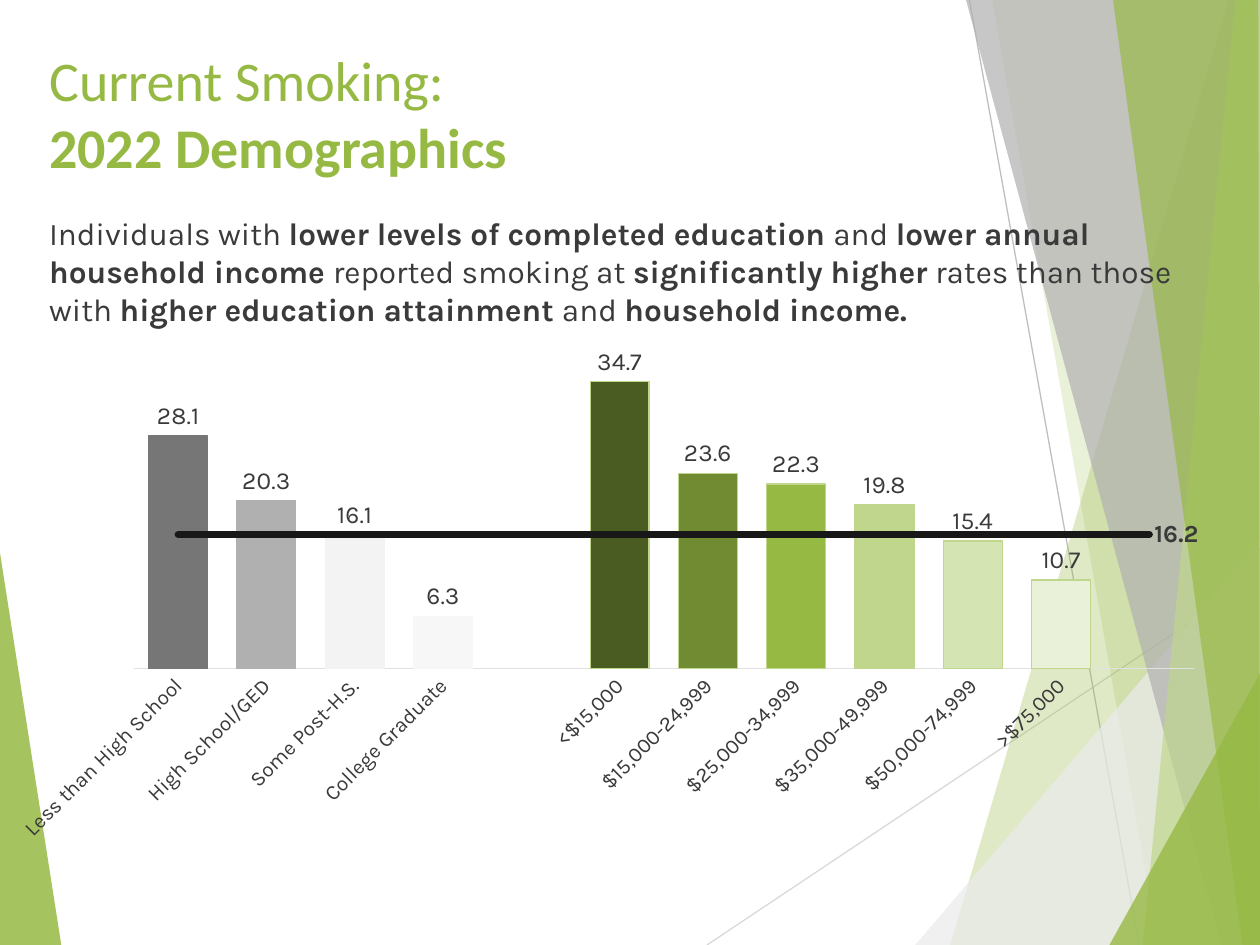
import pptx
import pptx.util
import pptx.chart.data
import pptx.dml.color
import pptx.enum.chart
import pptx.enum.shapes
import pptx.enum.text
import pptx.oxml
import pptx.oxml.ns

Pt = pptx.util.Pt
RGBColor = pptx.dml.color.RGBColor
qn = pptx.oxml.ns.qn

GREEN = RGBColor(0x96, 0xB9, 0x43)
PALE_GREEN = RGBColor(0xC0, 0xD6, 0x8D)
GREY = RGBColor(0xB0, 0xB0, 0xB0)
DARK_GREY = RGBColor(0x76, 0x76, 0x76)
LIGHT_GREY = RGBColor(0xEB, 0xEB, 0xEB)
RULE_GREY = RGBColor(0xD9, 0xD9, 0xD9)
RULE_DARK = RGBColor(0xBF, 0xBF, 0xBF)
AXIS = RGBColor(0xE1, 0xE1, 0xE1)
TEXT = RGBColor(0x3A, 0x3A, 0x3A)
BLACK = RGBColor(0x18, 0x18, 0x18)

EDUCATION = [
    ("Less than High School", 28.1, DARK_GREY),
    ("High School/GED", 20.3, GREY),
    ("Some Post-H.S.", 16.1, RGBColor(0xF3, 0xF3, 0xF3)),
    ("College Graduate", 6.3, RGBColor(0xF7, 0xF7, 0xF7)),
]
INCOME = [
    ("<$15,000", 34.7, RGBColor(0x4B, 0x5C, 0x22)),
    ("$15,000-24,999", 23.6, RGBColor(0x70, 0x8B, 0x32)),
    ("$25,000-34,999", 22.3, GREEN),
    ("$35,000-49,999", 19.8, PALE_GREEN),
    ("$50,000-74,999", 15.4, RGBColor(0xD5, 0xE4, 0xB3)),
    (">$75,000", 10.7, RGBColor(0xEA, 0xF1, 0xD9)),
]
GAP = ("", None, None)
BARS = EDUCATION + [GAP] + INCOME + [GAP]
AVERAGE = 16.2

LEFT_FACET = ([(0, 316), (35, 540), (0, 540)], GREEN, 85)
RULES = [
    ((404, 540), (720, 329), RULE_GREY),
    ((554, 0), (651, 540), RULE_DARK),
]
RIGHT_FACETS = [
    ([(702, 0), (543, 540), (720, 540), (720, 0)], GREEN, 30),
    ([(567, 0), (662, 540), (720, 540), (720, 0)], GREEN, 20),
    ([(523, 540), (720, 309), (720, 540)], LIGHT_GREY, 72),
    ([(552, 0), (698, 540), (720, 540), (720, 0)], GREY, 70),
    ([(706, 0), (653, 540), (720, 540), (720, 0)], PALE_GREEN, 70),
    ([(636, 0), (710, 540), (720, 540), (719, 0)], GREEN, 65),
    ([(634, 540), (720, 385), (720, 540)], GREEN, 80),
]


def add_child(parent, tag, **attributes):
    element = parent.makeelement(qn(tag), attributes)
    parent.append(element)
    return element


def remove_children(parent, tag):
    for element in parent.findall(qn(tag)):
        parent.remove(element)


def add_facet(s, left, top, points, color, opacity):
    corners = [(Pt(left + x), Pt(top + y)) for x, y in points]
    builder = s.shapes.build_freeform(*corners[0])
    builder.add_line_segments(corners[1:], close=True)
    sp = builder.convert_to_shape()
    sp.shadow.inherit = False
    sp.fill.solid()
    sp.fill.fore_color.rgb = color
    sp.line.fill.background()
    fill = sp._element.spPr.find(qn("a:solidFill"))
    add_child(fill[0], "a:alpha", val=str(opacity * 1000))


def add_backdrop(s, left, top):
    add_facet(s, left, top, *LEFT_FACET)
    for (x1, y1), (x2, y2), color in RULES:
        rule = s.shapes.add_connector(
            pptx.enum.shapes.MSO_CONNECTOR.STRAIGHT,
            Pt(left + x1), Pt(top + y1), Pt(left + x2), Pt(top + y2))
        rule.line.color.rgb = color
        rule.line.width = Pt(0.75)
        add_child(rule._element.spPr, "a:effectLst")
    for facet in RIGHT_FACETS:
        add_facet(s, left, top, *facet)


def style_font(font, name, size, color, bold=False):
    font.name = name
    font.size = Pt(size)
    font.color.rgb = color
    font.bold = bold


def add_text(s, left, top, width, height, anchor):
    tf = s.shapes.add_textbox(Pt(left), Pt(top), Pt(width), Pt(height)).text_frame
    tf.word_wrap = True
    tf.vertical_anchor = anchor
    return tf.paragraphs[0]


def add_run(p, text, *style):
    r = p.add_run()
    r.text = text
    style_font(r.font, *style)


def add_title(s, left, top, width, height):
    p = add_text(s, left, top, width, height, pptx.enum.text.MSO_ANCHOR.MIDDLE)
    add_run(p, "Current Smoking:", "Calibri", 32, GREEN)
    p.add_line_break()
    add_run(p, "2022 Demographics", "Calibri", 32, GREEN, True)


def add_finding(s, left, top, width, height):
    p = add_text(s, left, top, width, height, pptx.enum.text.MSO_ANCHOR.TOP)
    parts = [
        "Individuals with ", "lower levels of completed education ",
        "and ", "lower annual household income ",
        "reported smoking at ", "significantly higher",
        " rates than those with ", "higher education attainment ",
        "and ", "household income.",
    ]
    for i, text in enumerate(parts):
        add_run(p, text, "Karla", 18, TEXT, i % 2 == 1)


def move_to_line_plot(chart):
    bar_plot = chart.plots[0]._element
    ser = bar_plot.findall(qn("c:ser"))[1]
    remove_children(ser, "c:invertIfNegative")
    line_plot = bar_plot.makeelement(qn("c:lineChart"), {})
    add_child(line_plot, "c:grouping", val="standard")
    add_child(line_plot, "c:varyColors", val="0")
    line_plot.append(ser)
    add_child(line_plot, "c:marker", val="1")
    for axis in bar_plot.findall(qn("c:axId")):
        add_child(line_plot, "c:axId", val=axis.get("val"))
    bar_plot.addnext(line_plot)


def set_plot_area(chart, x, y, w, h):
    area = chart._chartSpace.chart.plotArea
    remove_children(area, "c:layout")
    layout = area.makeelement(qn("c:layout"), {})
    manual = add_child(layout, "c:manualLayout")
    add_child(manual, "c:layoutTarget", val="inner")
    add_child(manual, "c:xMode", val="edge")
    add_child(manual, "c:yMode", val="edge")
    for tag, value in zip("xywh", (x, y, w, h)):
        add_child(manual, "c:" + tag, val=str(value))
    area.insert(0, layout)


def style_bars(plot):
    plot.gap_width = 50
    plot.vary_by_categories = False
    series = plot.series[0]
    series.format.fill.solid()
    series.format.fill.fore_color.rgb = DARK_GREY
    for i, (name, value, color) in enumerate(BARS):
        if value is None:
            continue
        bar = series.points[i].format
        bar.fill.solid()
        bar.fill.fore_color.rgb = color
        bar.line.color.rgb = PALE_GREEN if i > len(EDUCATION) else color
        bar.line.width = Pt(0.75)
    labels = series.data_labels
    labels.show_value = True
    labels.position = pptx.enum.chart.XL_LABEL_POSITION.OUTSIDE_END
    style_font(labels.font, "Karla", 14, TEXT)


def style_average(plot):
    series = plot.series[0]
    series.smooth = False
    series.marker.style = pptx.enum.chart.XL_MARKER_STYLE.NONE
    line = series.format.line
    line.color.rgb = BLACK
    line.width = Pt(4)
    series._element.spPr.find(qn("a:ln")).set("cap", "rnd")
    series.data_labels.show_value = False
    label = series.points[len(BARS) - 1].data_label
    style_font(label.font, "Karla", 14, TEXT, True)
    label.position = pptx.enum.chart.XL_LABEL_POSITION.RIGHT


def add_smoking_chart(s, left, top, width, height):
    data = pptx.chart.data.CategoryChartData(number_format="0.0")
    data.categories = [name for name, value, color in BARS]
    data.add_series("Series 1", [value for name, value, color in BARS])
    data.add_series("Series 2", [AVERAGE] * len(BARS))
    chart = s.shapes.add_chart(
        pptx.enum.chart.XL_CHART_TYPE.COLUMN_CLUSTERED,
        Pt(left), Pt(top), Pt(width), Pt(height), data).chart
    chart.has_legend = chart.has_title = False
    style_font(chart.font, "Calibri", 10, TEXT)
    values = chart.value_axis
    values.minimum_scale, values.maximum_scale = 0, 40
    values.has_major_gridlines = values.visible = False
    axis = chart.category_axis
    axis.major_tick_mark = pptx.enum.chart.XL_TICK_MARK.NONE
    axis.format.line.color.rgb = AXIS
    axis.format.line.width = Pt(0.75)
    style_font(axis.tick_labels.font, "Karla", 12, TEXT)
    axis._element.find(qn("c:txPr")).find(qn("a:bodyPr")).set("rot", "-2700000")
    move_to_line_plot(chart)
    set_plot_area(chart, 0.11, 0.02, 0.87, 0.63)
    style_bars(chart.plots[0])
    style_average(chart.plots[1])


prs = pptx.Presentation()
prs.slide_width, prs.slide_height = Pt(720), Pt(540)
s = prs.slides.add_slide(prs.slide_layouts[6])
add_backdrop(s, 0, 0)
add_title(s, 21, 18, 694, 93)
add_smoking_chart(s, 0, 187, 696, 300)
add_finding(s, 21, 119, 675, 137)
prs.save("out.pptx")
